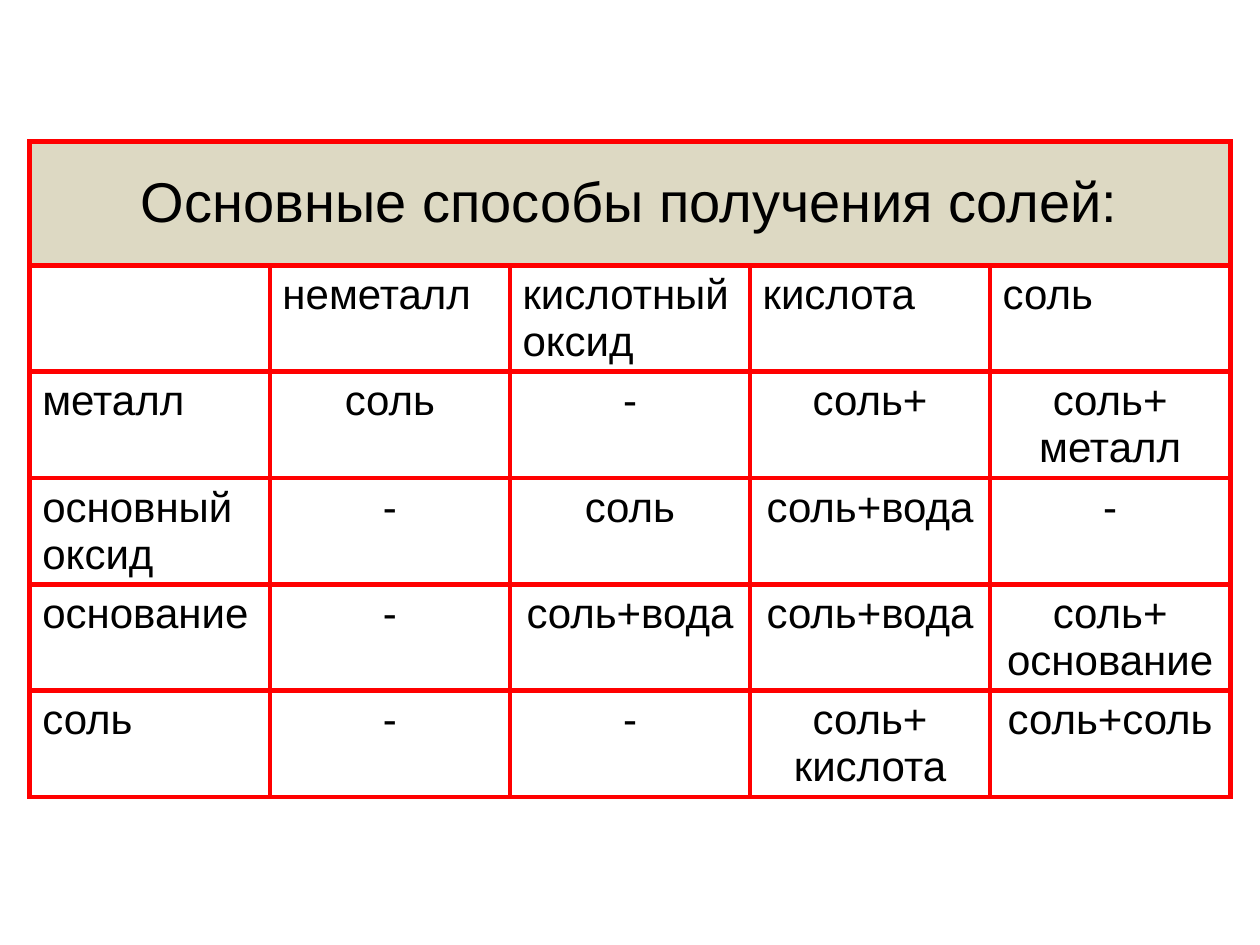
from dataclasses import dataclass

from lxml import etree
from pptx import Presentation
from pptx import util as u
from pptx.dml.color import RGBColor
from pptx.enum import text
from pptx.oxml import ns


@dataclass(frozen=True)
class Theme:
    font: str = "Arial"
    ink: str = "000000"
    border: str = "FF0000"
    title_fill: str = "DDD9C3"
    title_size: int = 32
    body_size: int = 24
    border_width: int = 3


THEME = Theme()
TITLE = "Основные способы получения солей:"
REACTIONS = [
    ["", "неметалл", "кислотный оксид", "кислота", "соль"],
    ["металл", "соль", "-", "соль+", "соль+\nметалл"],
    ["основный оксид", "-", "соль", "соль+вода", "-"],
    ["основание", "-", "соль+вода", "соль+вода", "соль+\nоснование"],
    ["соль", "-", "-", "соль+\nкислота", "соль+соль"],
]


def write_cell(cell, content, size, alignment):
    """Write each line of content as a paragraph of one run."""
    frame = cell.text_frame
    for index, line in enumerate(content.splitlines()):
        paragraph = frame.add_paragraph() if index else frame.paragraphs[0]
        paragraph.alignment = alignment
        run = paragraph.add_run()
        run.text = line
        run.font.name = THEME.font
        run.font.size = u.Pt(size)
        run.font.color.rgb = RGBColor.from_string(THEME.ink)


def outline_cell(cell):
    properties = cell._tc.get_or_add_tcPr()
    for index, side in enumerate(("lnL", "lnR", "lnT", "lnB")):
        line = etree.Element(ns.qn(f"a:{side}"), w=str(u.Pt(THEME.border_width)))
        fill = etree.SubElement(line, ns.qn("a:solidFill"))
        etree.SubElement(fill, ns.qn("a:srgbClr"), val=THEME.border)
        properties.insert(index, line)


def add_reaction_table(slide, left, top, width, title_height, row_height):
    row_count, column_count = len(REACTIONS) + 1, len(REACTIONS[0])
    height = title_height + row_height * len(REACTIONS)
    table = slide.shapes.add_table(
        row_count, column_count, left, top, width, height).table
    table.first_row = table.horz_banding = False
    for column in table.columns:
        column.width = width // column_count
    for index, row in enumerate(table.rows):
        row.height = row_height if index else title_height

    for cell in table.iter_cells():
        cell.fill.background()
        outline_cell(cell)

    title = table.cell(0, 0)
    title.merge(table.cell(0, column_count - 1))
    title.fill.solid()
    title.fill.fore_color.rgb = RGBColor.from_string(THEME.title_fill)
    title.vertical_anchor = text.MSO_ANCHOR.MIDDLE
    write_cell(title, TITLE, THEME.title_size, text.PP_ALIGN.CENTER)

    for row, contents in enumerate(REACTIONS):
        for column, content in enumerate(contents):
            is_heading = row == 0 or column == 0
            alignment = text.PP_ALIGN.LEFT if is_heading else text.PP_ALIGN.CENTER
            write_cell(table.cell(row + 1, column), content,
                       THEME.body_size, alignment)


def main():
    presentation = Presentation()
    presentation.slide_width = u.Cm(25.4)
    presentation.slide_height = u.Cm(19.05)
    blank_layout = presentation.slide_layouts[6]
    slide = presentation.slides.add_slide(blank_layout)
    add_reaction_table(slide, left=u.Cm(0.6), top=u.Cm(2.85), width=u.Cm(24.2),
                       title_height=u.Cm(2.5), row_height=u.Cm(2))
    presentation.save("out.pptx")


if __name__ == "__main__":
    main()
